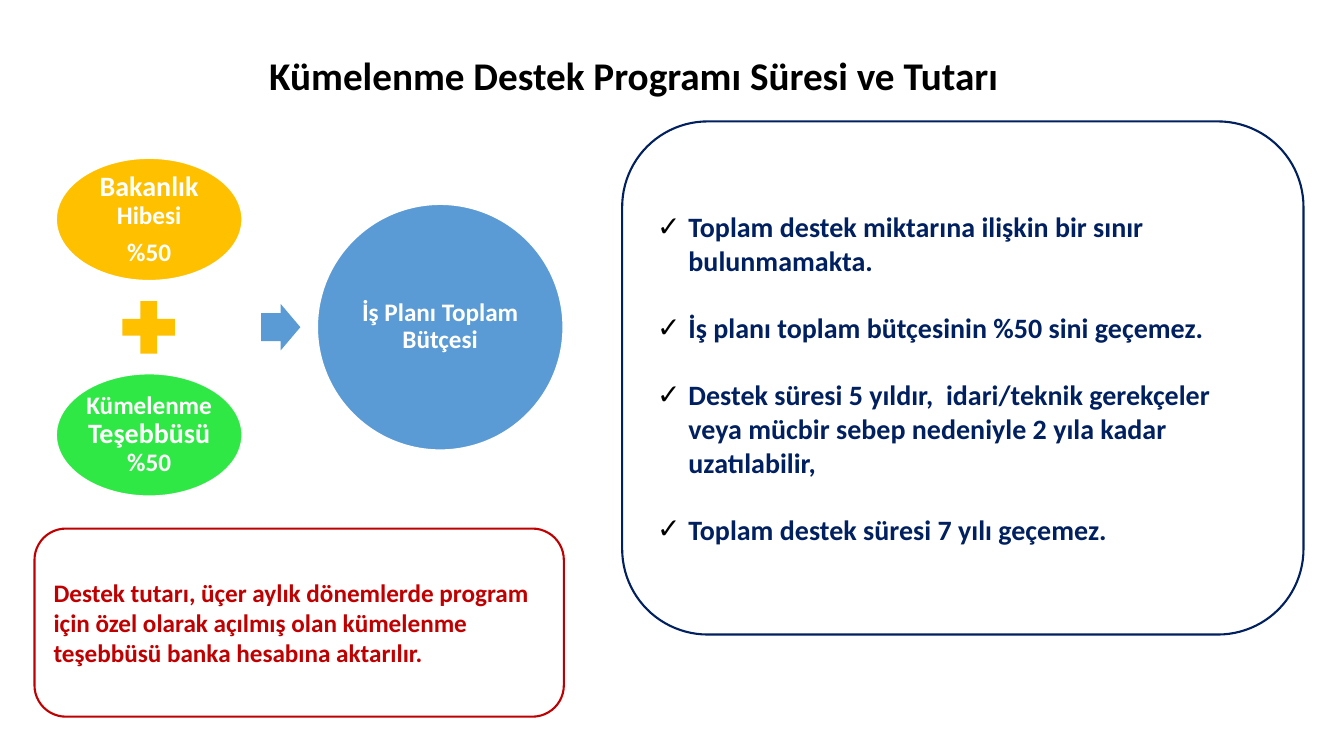
"""Build the slide on the duration and amount of the cluster support programme."""
from lxml import etree
from pptx import Presentation
from pptx.dml.color import RGBColor
from pptx.enum.shapes import MSO_SHAPE as SHAPE
from pptx.enum.text import MSO_ANCHOR as ANCHOR, MSO_AUTO_SIZE as AUTO, PP_ALIGN as ALIGN
from pptx.oxml.ns import qn
from pptx.util import Cm, Pt

BLACK = RGBColor(0x00, 0x00, 0x00)
WHITE = RGBColor(0xFF, 0xFF, 0xFF)
AMBER = RGBColor(0xFF, 0xC0, 0x00)
GREEN = RGBColor(0x30, 0xE8, 0x45)
BLUE = RGBColor(0x5B, 0x9B, 0xD5)
NAVY = RGBColor(0x00, 0x20, 0x60)
RED = RGBColor(0xC0, 0x00, 0x00)

prs = Presentation()
prs.slide_width, prs.slide_height = Cm(33.87), Cm(19.05)
s = prs.slides.add_slide(prs.slide_layouts[5])


def add_shape(kind, box, fill, line=None, width=2):
    sp = s.shapes.add_shape(kind, *[Cm(v) for v in box])
    sp.shadow.inherit = False
    sp.fill.solid()
    sp.fill.fore_color.rgb = fill
    if line is None:
        sp.line.fill.background()
    else:
        sp.line.color.rgb = line
        sp.line.width = Pt(width)
    sp.text_frame.word_wrap = True
    sp.text_frame.vertical_anchor = ANCHOR.MIDDLE
    return sp


def add_run(p, text, size, color):
    r = p.add_run()
    r.text = text
    for name, value in {"name": "Calibri", "size": Pt(size), "bold": True}.items():
        setattr(r.font, name, value)
    r.font.color.rgb = color


title = s.shapes.title
title.left, title.top, title.width, title.height = Cm(6.53), Cm(1.17), Cm(24.66), Cm(1.45)
tf = title.text_frame
for name, value in {"word_wrap": True, "auto_size": AUTO.NONE, "vertical_anchor": ANCHOR.TOP}.items():
    setattr(tf, name, value)
tf.paragraphs[0].alignment = ALIGN.LEFT
add_run(tf.paragraphs[0], "Kümelenme Destek Programı Süresi ve Tutarı", 28, BLACK)

ellipses = [
    ((1.4, 3.97, 4.72, 3.12), AMBER, [[("Bakanlık", 20), (" Hibesi", 18)], [("%50", 18)]]),
    ((1.4, 9.4, 4.72, 3.12), GREEN, [[("Kümelenme ", 18), ("Teşebbüsü", 20), (" %50", 18)]]),
    ((7.98, 5.13, 6.23, 6.23), BLUE, [[("İş Planı Toplam Bütçesi", 18)]]),
]
for box, fill, paragraphs in ellipses:
    tf = add_shape(SHAPE.OVAL, box, fill, WHITE).text_frame
    for side in ("left", "top", "right", "bottom"):
        setattr(tf, f"margin_{side}", Cm(0.08))
    for i, runs in enumerate(paragraphs):
        p = tf.add_paragraph() if i else tf.paragraphs[0]
        p.alignment = ALIGN.CENTER
        p.line_spacing = 0.9
        if i:
            p.space_before = Pt(7)
        for text, size in runs:
            add_run(p, text, size, WHITE)

add_shape(SHAPE.MATH_PLUS, (2.85, 7.35, 1.8, 1.8), AMBER)
arrow = add_shape(SHAPE.RIGHT_ARROW, (6.58, 7.66, 0.99, 1.17), BLUE)
arrow.adjustments[0] = 0.6
arrow.adjustments[1] = 0.5

rules = [
    "Toplam destek miktarına ilişkin bir sınır bulunmamakta.",
    "İş planı toplam bütçesinin %50 sini geçemez.",
    "Destek süresi 5 yıldır,  idari/teknik gerekçeler veya mücbir sebep nedeniyle 2 yıla kadar uzatılabilir,",
    "Toplam destek süresi 7 yılı geçemez.",
]
tf = add_shape(SHAPE.FLOWCHART_ALTERNATE_PROCESS, (15.68, 3.06, 17.17, 12.93), WHITE, NAVY, 1.5).text_frame
for i, rule in enumerate(rules):
    p = tf.add_paragraph() if i else tf.paragraphs[0]
    p.alignment = ALIGN.LEFT
    if i:
        p.space_before = Pt(24)
    pPr = p._p.get_or_add_pPr()
    pPr.set("marL", str(Cm(0.79)))
    pPr.set("indent", str(-Cm(0.79)))
    color = etree.SubElement(pPr, qn("a:buClr"))
    etree.SubElement(color, qn("a:srgbClr"), val=str(BLACK))
    etree.SubElement(pPr, qn("a:buFont"), typeface="Calibri")
    etree.SubElement(pPr, qn("a:buChar"), char="✓")
    add_run(p, rule, 20, NAVY)

sp = add_shape(SHAPE.FLOWCHART_ALTERNATE_PROCESS, (0.87, 13.32, 13.34, 4.74), WHITE, RED, 1.5)
p = sp.text_frame.paragraphs[0]
p.alignment = ALIGN.LEFT
add_run(p, "Destek tutarı, üçer aylık dönemlerde program için özel olarak açılmış olan "
        "kümelenme teşebbüsü banka hesabına aktarılır.", 18, RED)

prs.save("out.pptx")
